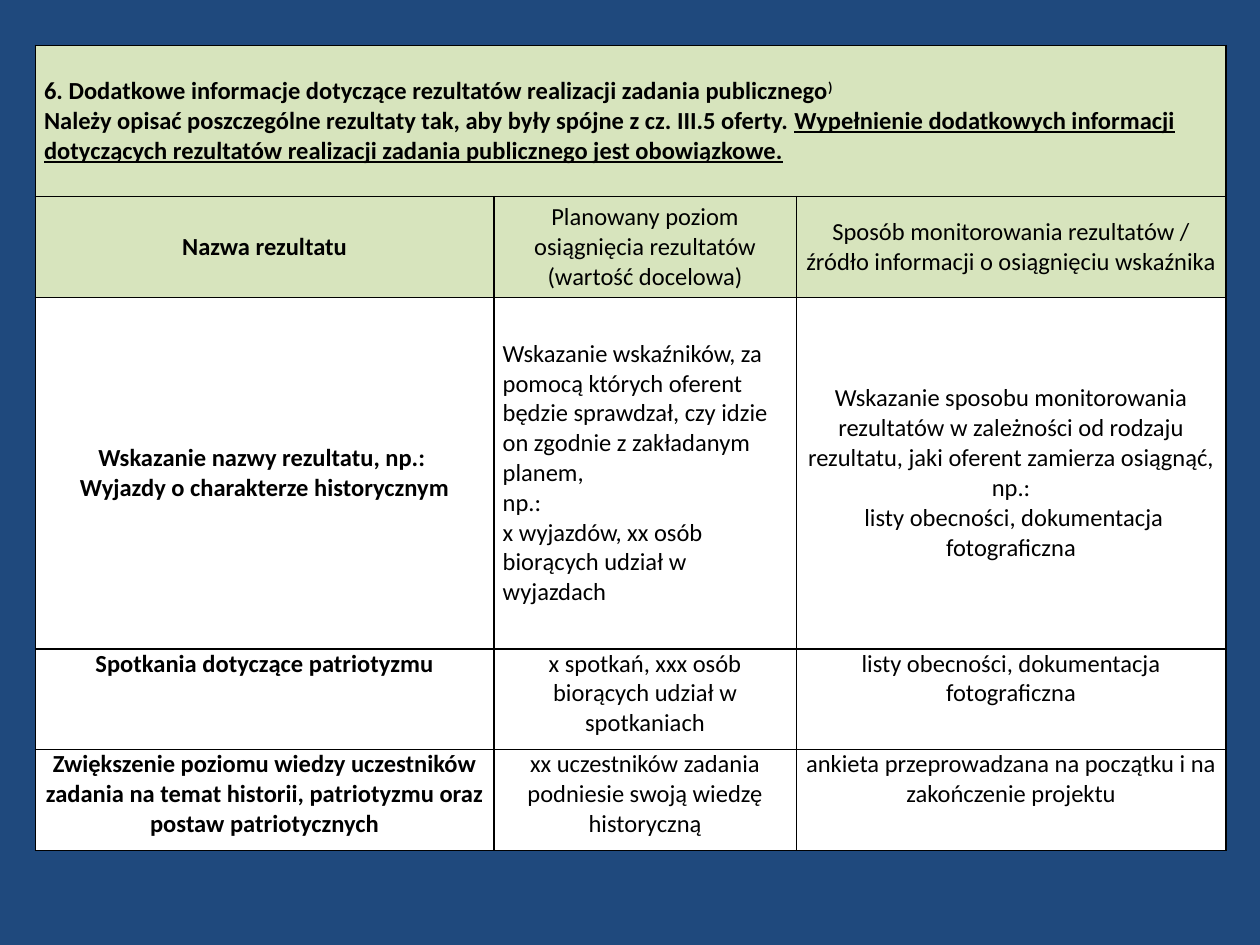
from lxml.etree import SubElement
from pptx import Presentation
from pptx.dml.color import RGBColor
from pptx.enum.text import MSO_ANCHOR as Anchor, PP_ALIGN as Align
from pptx.oxml.ns import qn
from pptx.util import Inches, Pt

NAVY, GREEN, WHITE, BLACK = "1F497D", "D7E4BD", "FFFFFF", "000000"
COLUMN_WIDTHS = [3.64, 2.4, 3.41]
ROW_HEIGHTS = [1.2, 0.8, 2.79, 0.8, 0.8]

# Each paragraph of the heading is a list of (text, style) runs.
HEADING = [
    [("6. Dodatkowe informacje dotyczące rezultatów realizacji zadania publicznego", ""),
     (")", "superscript")],
    [("Należy opisać poszczególne rezultaty tak, aby były spójne z cz. III.5 oferty. ", ""),
     ("Wypełnienie dodatkowych informacji dotyczących rezultatów realizacji "
      "zadania publicznego jest obowiązkowe.", "underline")],
]

# Each cell is a list of paragraphs.
ROWS = [
    [["Nazwa rezultatu"],
     ["Planowany poziom osiągnięcia rezultatów (wartość docelowa)"],
     ["Sposób monitorowania rezultatów / źródło informacji o osiągnięciu wskaźnika"]],
    [["Wskazanie nazwy rezultatu, np.: ", "Wyjazdy o charakterze historycznym"],
     ["Wskazanie wskaźników, za pomocą których oferent będzie sprawdzał, "
      "czy idzie on zgodnie z zakładanym planem,",
      "np.:",
      "x wyjazdów, xx osób biorących udział w wyjazdach"],
     ["Wskazanie sposobu monitorowania rezultatów w zależności od rodzaju rezultatu, "
      "jaki oferent zamierza osiągnąć, np.:",
      " listy obecności, dokumentacja fotograficzna"]],
    [["Spotkania dotyczące patriotyzmu"],
     ["x spotkań, xxx osób biorących udział w spotkaniach"],
     ["listy obecności, dokumentacja fotograficzna"]],
    [["Zwiększenie poziomu wiedzy uczestników zadania na temat historii, "
      "patriotyzmu oraz postaw patriotycznych"],
     ["xx uczestników zadania podniesie swoją wiedzę historyczną"],
     ["ankieta przeprowadzana na początku i na zakończenie projektu"]],
]


def color(value):
    return RGBColor.from_string(value)


def add_borders(cell):
    properties = cell._tc.get_or_add_tcPr()
    for side in ("a:lnL", "a:lnR", "a:lnT", "a:lnB"):
        line = SubElement(properties, qn(side), w=str(Pt(1)))
        fill = SubElement(line, qn("a:solidFill"))
        SubElement(fill, qn("a:srgbClr"), val=BLACK)


def format_cell(cell, fill, anchor):
    add_borders(cell)
    cell.fill.solid()
    cell.fill.fore_color.rgb = color(fill)
    cell.margin_left = cell.margin_right = Inches(0.07)
    cell.margin_top = cell.margin_bottom = 0
    cell.vertical_anchor = anchor


def add_span(para, text, bold, style=""):
    span = para.add_run()
    span.text = text
    span.font.name = "Calibri"
    span.font.size = Pt(14)
    span.font.bold = bold
    span.font.color.rgb = color(BLACK)
    if style == "underline":
        span.font.underline = True
    elif style == "superscript":
        span._r.get_or_add_rPr().set("baseline", "30000")


def write_cell(cell, paragraphs, align, bold):
    """Write paragraphs, each a list of (text, style) runs."""
    frame = cell.text_frame
    for index, runs in enumerate(paragraphs):
        para = frame.add_paragraph() if index else frame.paragraphs[0]
        para.alignment = align
        for text, style in runs:
            add_span(para, text, bold, style)


def add_results_table(page, left, top):
    frame = page.shapes.add_table(
        len(ROW_HEIGHTS), len(COLUMN_WIDTHS), Inches(left), Inches(top),
        Inches(sum(COLUMN_WIDTHS)), Inches(sum(ROW_HEIGHTS)))
    table = frame.table
    for column, width in zip(table.columns, COLUMN_WIDTHS):
        column.width = Inches(width)
    for r, height in enumerate(ROW_HEIGHTS):
        table.rows[r].height = Inches(height)
        for cell in table.rows[r].cells:
            format_cell(cell, GREEN if r < 2 else WHITE,
                        Anchor.MIDDLE if r < 3 else Anchor.TOP)

    table.cell(0, 0).merge(table.cell(0, len(COLUMN_WIDTHS) - 1))
    write_cell(table.cell(0, 0), HEADING, Align.LEFT, True)
    for r, row in enumerate(ROWS, start=1):
        for c, texts in enumerate(row):
            align = Align.LEFT if (r, c) == (2, 1) else Align.CENTER
            write_cell(table.cell(r, c), [[(text, "")] for text in texts], align, c == 0)


def main():
    deck = Presentation()
    deck.slide_width, deck.slide_height = Inches(10), Inches(7.5)
    page = deck.slides.add_slide(deck.slide_layouts[6])
    page.background.fill.solid()
    page.background.fill.fore_color.rgb = color(NAVY)
    add_results_table(page, 0.28, 0.36)
    deck.save("out.pptx")


if __name__ == "__main__":
    main()
